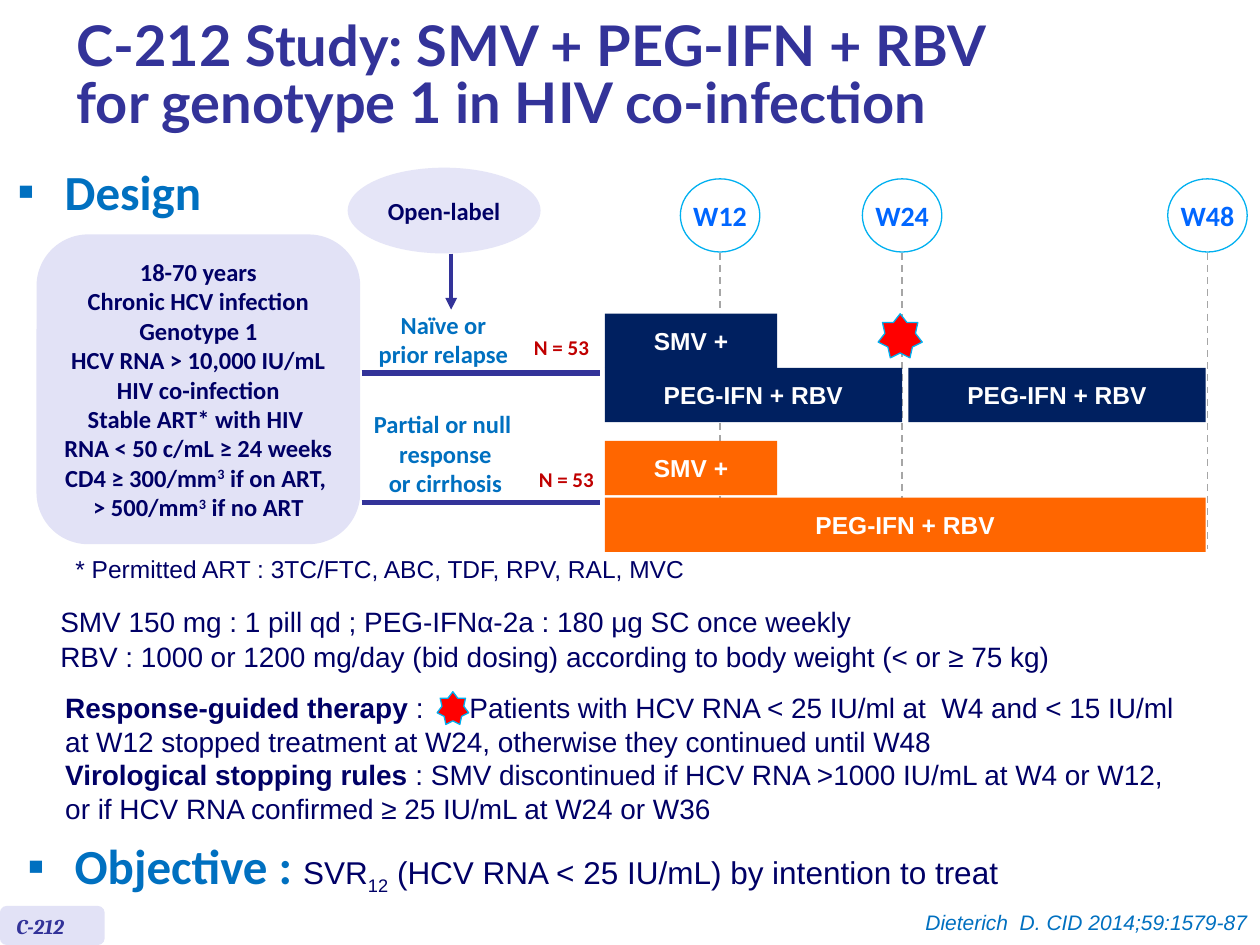
import pptx
import pptx.dml.color
import pptx.enum.dml
import pptx.enum.shapes
import pptx.enum.text
import pptx.oxml
import pptx.oxml.ns
import pptx.util

Pt = pptx.util.Pt
KIND = pptx.enum.shapes.MSO_SHAPE
ALIGN = {"l": pptx.enum.text.PP_ALIGN.LEFT,
         "c": pptx.enum.text.PP_ALIGN.CENTER,
         "r": pptx.enum.text.PP_ALIGN.RIGHT}
MIDDLE = pptx.enum.text.MSO_ANCHOR.MIDDLE
TOP = pptx.enum.text.MSO_ANCHOR.TOP

NAVY, INDIGO, BLUE, RED = "000066", "333399", "0070C0", "C00000"
DARK, ORANGE, PALE, CYAN = "002060", "FF6600", "E2E2F6", "00B0F0"
LABEL = dict(size=14, font="Calibri", bold=True)
BODY = dict(size=16, font="Arial", color=NAVY)
HEAD = dict(size=28, font="Calibri", color=BLUE, bold=True)


def color(code):
    return pptx.dml.color.RGBColor.from_string(code)


def add_xml(parent, body):
    """Append an element of the drawing namespace."""
    tag, rest = body.split(" ", 1)
    space = pptx.oxml.ns.nsdecls("a")
    parent.append(pptx.oxml.parse_xml(f"<a:{tag} {space} {rest}"))


def add_run(para, text, size=14, font="Arial", color_=NAVY, bold=False,
            italic=False, base=0):
    run = para.add_run()
    run.text = text
    face = run.font
    face.size, face.name, face.bold, face.italic = Pt(size), font, bold, italic
    face.color.rgb = color(color_)
    if base:
        run._r.get_or_add_rPr().set("baseline", str(base * 1000))


def write(shape, paras, align="l", anchor=TOP, wrap=True, hang=0, bullet=None,
          tab=0, before=0, spacing=None, color=NAVY, **style):
    """Fill a shape; a paragraph is a string or a list of (text, changes)."""
    frame = shape.text_frame
    frame.word_wrap, frame.vertical_anchor = wrap, anchor
    for i, runs in enumerate(paras):
        para = frame.paragraphs[0] if i == 0 else frame.add_paragraph()
        para.alignment = ALIGN[align]
        props = para._p.get_or_add_pPr()
        if hang:
            props.set("marL", str(Pt(hang)))
            props.set("indent", str(-Pt(hang)))
        if bullet:
            add_xml(props, f'buClr ><a:srgbClr val="{BLUE}"/></a:buClr>')
            add_xml(props, 'buFont typeface="Arial"/>')
            add_xml(props, f'buChar char="{bullet}"/>')
        if tab:
            add_xml(props, f'tabLst ><a:tab pos="{Pt(tab)}" algn="l"/></a:tabLst>')
        if before and i:
            para.space_before = Pt(before)
        if spacing:
            para.line_spacing = spacing
        for text, change in [(runs, {})] if isinstance(runs, str) else runs:
            look = {"color": color, **style, **change}
            look["color_"] = look.pop("color")
            for n, line in enumerate(text.split("\n")):
                if n:
                    para.add_line_break()
                add_run(para, line, **look)


def add_text(slide, box, paras, **style):
    write(slide.shapes.add_textbox(*map(Pt, box)), paras, **style)


def add_box(slide, kind, box, fill, edge=None, paras=(), **style):
    shape = slide.shapes.add_shape(kind, *map(Pt, box))
    shape.shadow.inherit = False
    shape.fill.solid()
    shape.fill.fore_color.rgb = color(fill)
    if edge:
        shape.line.color.rgb = color(edge)
        shape.line.width = Pt(0.75)
    else:
        shape.line.fill.background()
    if paras:
        write(shape, paras, align="c", anchor=MIDDLE, wrap=False, **style)


def add_line(slide, ends, tint, width, dash=False, arrow=False):
    kind = pptx.enum.shapes.MSO_CONNECTOR.STRAIGHT
    line = slide.shapes.add_connector(kind, *map(Pt, ends))
    line.line.color.rgb = color(tint)
    line.line.width = Pt(width)
    if dash:
        line.line.dash_style = pptx.enum.dml.MSO_LINE.DASH
    if arrow:
        add_xml(line.line._get_or_add_ln(), 'tailEnd type="triangle"/>')
    add_xml(line._element.spPr, "effectLst />")


def add_design(slide):
    # Week markers, with guides behind the bars
    weeks = (("W12", 411.5), ("W24", 515.5), ("W48", 690))
    for name, x in weeks:
        add_line(slide, (x, 144.5, x, 314), "A6A6A6", 1, dash=True)
    for name, x in weeks:
        add_box(slide, KIND.OVAL, (x - 22.7, 102.2, 45.4, 41.8), "FFFFFF",
                CYAN, [name], size=16, font="Calibri", bold=True,
                color="0066FF")

    # Patients and allocation
    add_box(slide, KIND.OVAL, (198.7, 95.8, 110.2, 49), "E5E5F7",
            paras=["Open-label"], **LABEL)
    add_line(slide, (257.8, 145, 257.8, 177), INDIGO, 2.25, arrow=True)
    power = ("3", {"base": 30})
    add_box(slide, KIND.ROUNDED_RECTANGLE, (20.9, 134, 185, 177), PALE, paras=[
        "18-70 years", "Chronic HCV infection", "Genotype 1",
        "HCV RNA > 10,000 IU/mL", "HIV co-infection", "Stable ART* with HIV ",
        "RNA < 50 c/mL ≥ 24 weeks",
        [("CD4 ≥ 300/mm", {}), power, (" if on ART, ", {})],
        [("> 500/mm", {}), power, (" if no ART", {})]], **LABEL)

    # Study arms
    arms = (
        (213.1, (208.8, 173.5, 89.3, 41), ["Naïve or", "prior relapse"],
         (297.4, 187.9)),
        (287.3, (205.9, 230.4, 97.2, 58.3),
         ["Partial or null ", "response", "or cirrhosis"], (300.2, 262.8)))
    for y, box, paras, spot in arms:
        add_line(slide, (206.6, y, 342.7, y), INDIGO, 3)
        add_text(slide, box, paras, align="c", wrap=False, color=BLUE, **LABEL)
        add_text(slide, (*spot, 46.8, 21.6), ["N = 53"], align="c", wrap=False,
                 size=12, font="Calibri", color=RED, bold=True)

    # Treatment bars
    left, end, high = 345.6, 689, 31
    both = "PEG-IFN + RBV"
    for x, y, right, fill, text in (
            (left, 179.3, 444.2, DARK, "SMV +"),
            (left, 210.3, 515.5, DARK, both),
            (519.1, 210.3, end, DARK, both),
            (left, 252, 444.2, ORANGE, "SMV +"),
            (left, 284.4, end, ORANGE, both)):
        add_box(slide, KIND.RECTANGLE, (x, y, right - x, high), fill,
                paras=[text], size=14, font="Arial", bold=True, color="FFFFFF")
    add_box(slide, KIND.STAR_7_POINT, (501.8, 179.3, 25.2, 25.2), "FF0000",
            CYAN)


def add_notes(slide):
    # Treatment details
    add_text(slide, (36, 313.2, 365, 24.5),
             ["* Permitted ART : 3TC/FTC, ABC, TDF, RPV, RAL, MVC"],
             wrap=False, size=14, font="Arial")
    add_text(slide, (27.4, 342, 682, 46.8), [
        "SMV 150 mg : 1 pill qd ; PEG-IFNα-2a : 180 μg SC once weekly",
        "RBV : 1000 or 1200 mg/day (bid dosing) according to body weight "
        "(< or ≥ 75 kg)"], hang=27, before=0.7, **BODY)

    # Rules, with a tab that leaves room for the star
    strong = {"bold": True}
    add_box(slide, KIND.STAR_7_POINT, (249.8, 395.3, 18, 18.7), "FF0000", CYAN)
    add_text(slide, (30.2, 391, 689.8, 85), [
        [("Response-guided therapy ", strong),
         (":\tPatients with HCV RNA < 25 IU/ml at  W4 and < 15 IU/ml\n"
          "at W12 stopped treatment at W24, otherwise they continued until W48",
          {})],
        [("Virological stopping rules ", strong),
         (": SMV discontinued if HCV RNA >1000 IU/mL at W4 or W12,\n"
          "or if HCV RNA confirmed ≥ 25 IU/mL at W24 or W36", {})]],
        tab=231, **BODY)


def main():
    deck = pptx.Presentation()
    deck.slide_width, deck.slide_height = Pt(720), Pt(540)
    slide = deck.slides.add_slide(deck.slide_layouts[6])

    # Title and headings
    add_text(slide, (36.7, 5.8, 657.4, 77),
             ["C-212 Study: SMV + PEG-IFN + RBV\n"
              "for genotype 1 in HIV co-infection"], anchor=MIDDLE,
             spacing=0.85, size=32, font="Lato", color=INDIGO, bold=True)
    add_text(slide, (2.9, 88.6, 142.6, 45.4), ["Design"], hang=27, bullet="▪",
             **HEAD)
    add_design(slide)
    add_notes(slide)

    # Objective
    plain = dict(size=18, font="Arial", color=NAVY, bold=False)
    add_text(slide, (8.6, 473.8, 629.3, 41), [[
        ("Objective : ", {}), ("SVR", plain), ("12", {**plain, "base": -25}),
        (" (HCV RNA < 25 IU/mL) by intention to treat", plain)]],
        hang=27, bullet="▪", **HEAD)

    # Footer
    add_box(slide, KIND.ROUNDED_RECTANGLE, (0, 517.7, 59.8, 22.3), PALE)
    add_text(slide, (2.2, 518.4, 56.9, 21.6), ["C-212"], size=12,
             font="Cambria", color=INDIGO, bold=True, italic=True)
    add_text(slide, (490.3, 516.2, 229.7, 21.6),
             ["Dieterich  D. CID 2014;59:1579-87"], align="r", size=12,
             font="Arial", color=BLUE, italic=True)
    deck.save("out.pptx")


if __name__ == "__main__":
    main()
